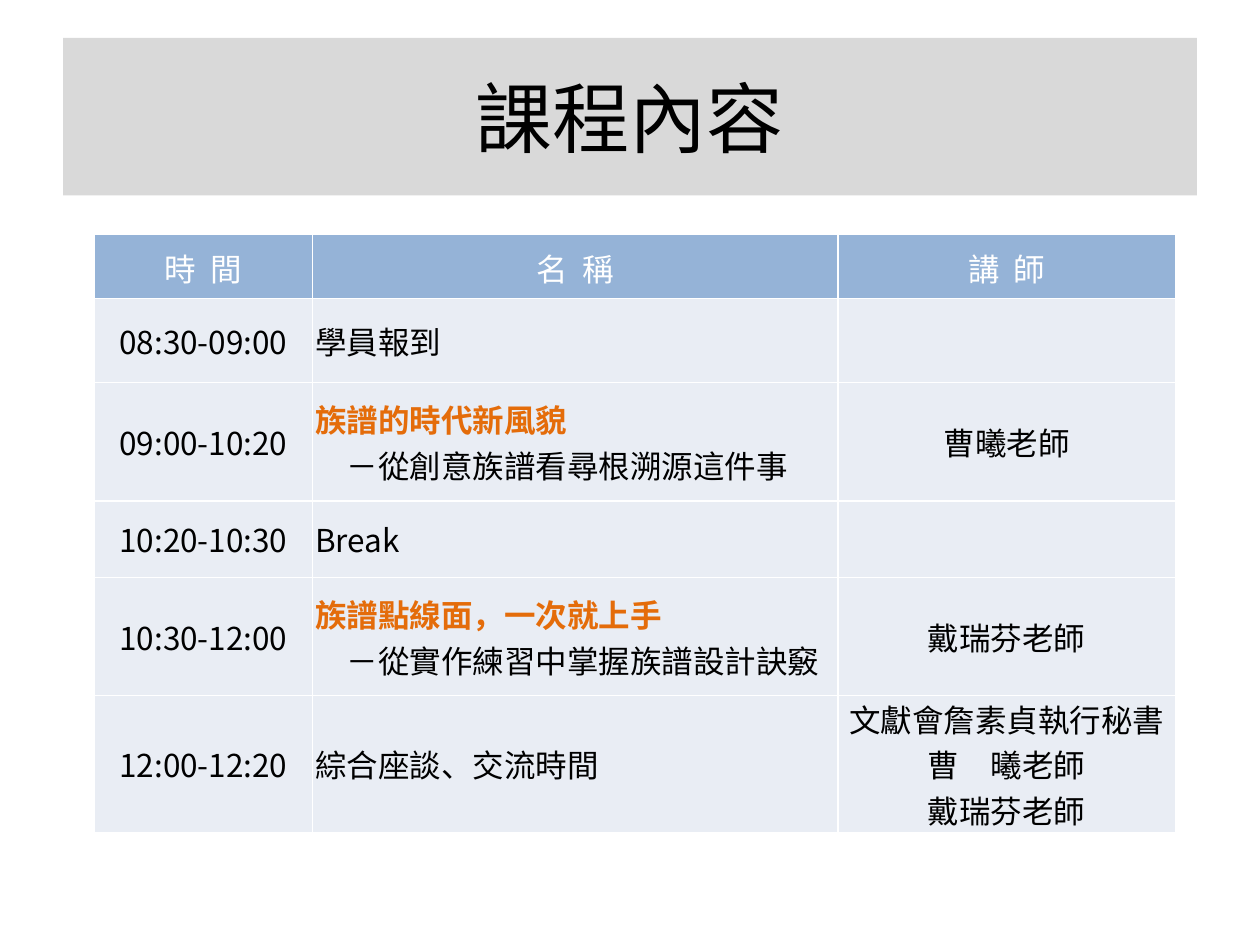
from dataclasses import dataclass

from lxml import etree
from pptx import Presentation
from pptx.dml.color import RGBColor
from pptx.enum.text import MSO_ANCHOR, PP_ALIGN
from pptx.oxml.ns import qn
from pptx.util import Pt

CENTER, LEFT = PP_ALIGN.CENTER, PP_ALIGN.LEFT
MIDDLE = MSO_ANCHOR.MIDDLE
TITLE_ONLY = 5


@dataclass(frozen=True)
class Theme:
    title_font: str = "Calibri"
    table_font: str = "Noto Sans CJK SC"
    title_size: int = 44
    table_size: int = 18
    header_spacing: int = 28
    border_width: int = 1
    title_fill: str = "D9D9D9"
    header_fill: str = "95B3D7"
    body_fill: str = "E9EDF4"
    text: str = "000000"
    header_text: str = "FFFFFF"
    accent: str = "E46C0A"
    border: str = "FFFFFF"


THEME = Theme()
TITLE_BOX = (36, 21.6, 648, 90)
TABLE_BOX = (54, 134, 617.8, 325.5)
COLUMN_WIDTHS = (124.6, 300.2, 193)
ROW_HEIGHTS = (36.5, 48.2, 67.5, 43.9, 67.5, 61.2)
COLUMN_ALIGNMENTS = (CENTER, LEFT, CENTER)

HEADER = ("時  間", "名  稱", "講  師")
SESSIONS = (
    ("08:30-09:00", "學員報到", ""),
    ("09:00-10:20", "族譜的時代新風貌\n　－從創意族譜看尋根溯源這件事", "曹曦老師"),
    ("10:20-10:30", "Break", ""),
    ("10:30-12:00", "族譜點線面，一次就上手\n　－從實作練習中掌握族譜設計訣竅", "戴瑞芬老師"),
    ("12:00-12:20", "綜合座談、交流時間", "文獻會詹素貞執行秘書\n曹　曦老師\n戴瑞芬老師"),
)


def fill_solid(target, color):
    target.fill.solid()
    target.fill.fore_color.rgb = RGBColor.from_string(color)


def format_font(font, name, size, color, bold=False):
    font.name = name
    font.size = Pt(size)
    font.bold = bold
    font.color.rgb = RGBColor.from_string(color)


def add_title(slide, box, text):
    title = slide.shapes.title
    title.left, title.top, title.width, title.height = map(Pt, box)
    fill_solid(title, THEME.title_fill)
    title.text_frame.text = text
    title.text_frame.vertical_anchor = MIDDLE
    paragraph = title.text_frame.paragraphs[0]
    paragraph.alignment = CENTER
    format_font(paragraph.runs[0].font, THEME.title_font, THEME.title_size, THEME.text)


def set_borders(cell):
    properties = cell._tc.get_or_add_tcPr()
    for index, side in enumerate(("a:lnL", "a:lnR", "a:lnT", "a:lnB")):
        line = etree.Element(qn(side), w=str(Pt(THEME.border_width)))
        solid = etree.SubElement(line, qn("a:solidFill"))
        etree.SubElement(solid, qn("a:srgbClr"), val=THEME.border)
        properties.insert(index, line)


def format_cell(cell, text, alignment, is_header):
    fill_solid(cell, THEME.header_fill if is_header else THEME.body_fill)
    set_borders(cell)
    cell.margin_left = cell.margin_right = Pt(1.5)
    cell.margin_top = cell.margin_bottom = Pt(0)
    cell.vertical_anchor = MIDDLE
    cell.text_frame.text = text
    paragraphs = cell.text_frame.paragraphs
    for index, paragraph in enumerate(paragraphs):
        paragraph.alignment = CENTER if is_header else alignment
        if is_header:
            paragraph.line_spacing = Pt(THEME.header_spacing)
        is_topic = alignment == LEFT and len(paragraphs) > 1 and index == 0
        color = THEME.header_text if is_header else THEME.accent if is_topic else THEME.text
        for run in paragraph.runs:
            format_font(run.font, THEME.table_font, THEME.table_size, color, is_topic)
            etree.SubElement(run.font._element, qn("a:ea"), typeface=THEME.table_font)


def add_schedule(slide, box, rows):
    table = slide.shapes.add_table(len(rows), len(COLUMN_WIDTHS), *map(Pt, box)).table
    for column, width in zip(table.columns, COLUMN_WIDTHS):
        column.width = Pt(width)
    for row, height in zip(table.rows, ROW_HEIGHTS):
        row.height = Pt(height)
    for row_index, texts in enumerate(rows):
        for column_index, text in enumerate(texts):
            format_cell(table.cell(row_index, column_index), text,
                        COLUMN_ALIGNMENTS[column_index], row_index == 0)


def main():
    presentation = Presentation()
    presentation.slide_width, presentation.slide_height = Pt(720), Pt(540)
    slide = presentation.slides.add_slide(presentation.slide_layouts[TITLE_ONLY])
    add_title(slide, TITLE_BOX, "課程內容")
    add_schedule(slide, TABLE_BOX, (HEADER, *SESSIONS))
    presentation.save("out.pptx")


if __name__ == "__main__":
    main()
